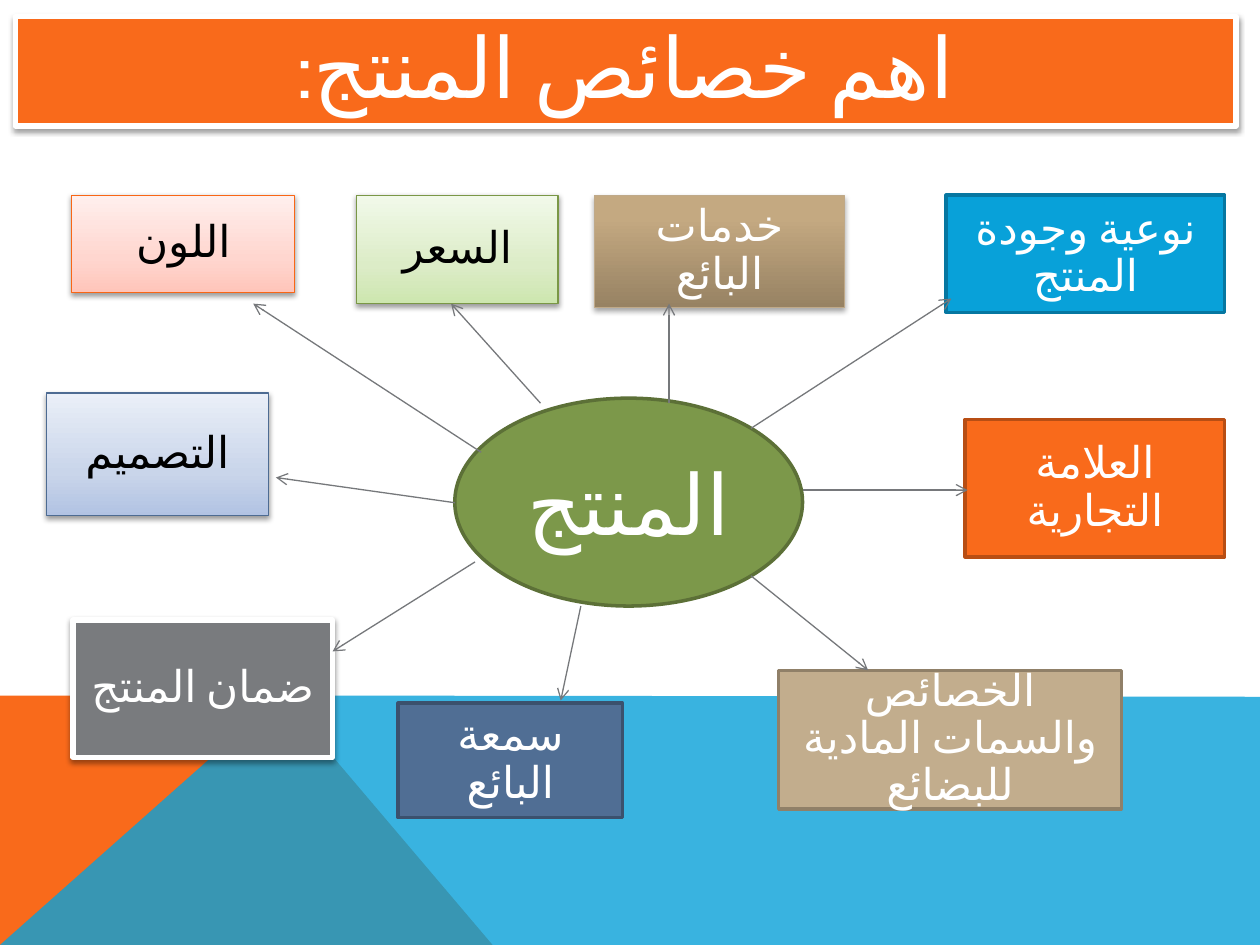
from lxml.etree import SubElement
from pptx import Presentation
from pptx.dml.color import RGBColor
from pptx.enum.lang import MSO_LANGUAGE_ID
from pptx.enum.shapes import MSO_CONNECTOR, MSO_SHAPE
from pptx.enum.text import MSO_ANCHOR, MSO_AUTO_SIZE, PP_ALIGN
from pptx.oxml.ns import qn
from pptx.util import Inches, Pt

WIDE, HIGH = 10, 7.5
FONT = "Cabin"
WHITE, BLACK = RGBColor(255, 255, 255), RGBColor(0, 0, 0)
ORANGE, RUST = RGBColor(0xF9, 0x6A, 0x1B), RGBColor(0xB8, 0x4E, 0x14)
FLAME = RGBColor(0xF9, 0x66, 0x15)
SKY, SEA = RGBColor(0x08, 0xA1, 0xD9), RGBColor(0x06, 0x77, 0xA1)
GREEN, MOSS = RGBColor(0x7C, 0x98, 0x4A), RGBColor(0x5C, 0x70, 0x37)
LEAF = RGBColor(0x7A, 0x97, 0x46)
SAND, EARTH = RGBColor(0xC2, 0xAD, 0x8D), RGBColor(0x90, 0x80, 0x68)
TAN = RGBColor(0xBF, 0xA9, 0x89)
BLUE, NAVY = RGBColor(0x50, 0x6E, 0x94), RGBColor(0x3B, 0x51, 0x6D)
STEEL = RGBColor(0x4D, 0x6B, 0x92)
GRAY, ASH = RGBColor(0x79, 0x7B, 0x7E), RGBColor(0x76, 0x78, 0x7B)

# Gradients run from bottom to top: (percent, colour)
ICE = [(0, "B2C3E3"), (35, "C9D5EA"), (100, "EAEFF8")]
CLAY = [(0, "978263"), (80, "C4A981"), (100, "C6AA80")]
LIME = [(0, "CDE6AF"), (35, "DCECC7"), (100, "F1F9E9")]
ROSE = [(0, "FFC5BA"), (35, "FFD6CF"), (100, "FFEFED")]

# Shadows: opacity percent, distance in points
SOFT, FAINT = (38, 1.6), (35, 1.8)

TITLE = "اهم خصائص المنتج:"
HUB = "المنتج"

# text, (left, top, width, height), fill, line, line width, shadow,
# text colour, arrow from the hub, arrow to the box
TRAITS = [
    ("نوعية وجودة المنتج", (7.51, 1.55, 2.21, 0.93), SKY, SEA, 2, None,
     WHITE, (5.96, 3.4), (7.55, 2.37)),
    ("خدمات البائع", (4.72, 1.55, 1.98, 0.89), CLAY, TAN, 0.75, FAINT,
     WHITE, (5.31, 3.2), (5.31, 2.41)),
    ("السعر", (2.83, 1.55, 1.6, 0.86), LIME, LEAF, 0.75, SOFT,
     BLACK, (4.29, 3.2), (3.58, 2.41)),
    ("اللون", (0.57, 1.55, 1.77, 0.77), ROSE, FLAME, 0.75, SOFT,
     BLACK, (3.82, 3.59), (2.01, 2.41)),
    ("التصميم", (0.37, 3.12, 1.76, 0.97), ICE, STEEL, 0.75, SOFT,
     BLACK, (3.61, 3.99), (2.19, 3.79)),
    ("ضمان المنتج", (0.58, 4.92, 2.06, 1.09), GRAY, WHITE, 3, SOFT,
     WHITE, (3.77, 4.46), (2.64, 5.17)),
    ("سمعة البائع", (3.16, 5.58, 1.78, 0.91), BLUE, NAVY, 2, None,
     WHITE, (4.61, 4.81), (4.45, 5.56)),
    ("الخصائص والسمات المادية للبضائع", (6.18, 5.32, 2.72, 1.1), SAND,
     EARTH, 2, None, WHITE, (5.96, 4.57), (6.89, 5.32)),
    ("العلامة التجارية", (7.66, 3.33, 2.06, 1.09), ORANGE, RUST, 2, None,
     WHITE, (6.37, 3.89), (7.68, 3.89)),
]

# Footer bands: points, colour, opacity percent
BANDS = [
    ([(0, HIGH), (0, 5.52), (2.23, 5.52), (3.91, HIGH)], ORANGE, 100),
    ([(0, HIGH), (2.23, 5.52), (WIDE, 5.53), (WIDE, HIGH)], SKY, 80),
]


def add(node, tag, **attrs):
    return SubElement(node, qn(tag), attrs)


def paint(shape, fill, line, width, shade=None):
    """Set fill (a colour or a list of stops), outline and shadow."""
    props = shape._element.spPr
    if isinstance(fill, list):
        shape.fill.gradient()
        shape.fill.gradient_angle = 90
        stops = props.find(qn("a:gradFill")).find(qn("a:gsLst"))
        stops.clear()
        for at, tint in fill:
            stop = add(stops, "a:gs", pos=str(at * 1000))
            add(stop, "a:srgbClr", val=tint)
    else:
        shape.fill.solid()
        shape.fill.fore_color.rgb = fill
    shape.line.color.rgb = line
    shape.line.width = Pt(width)
    shape.shadow.inherit = False
    if shade:
        alpha, dist = shade
        glow = add(props.find(qn("a:effectLst")), "a:outerShdw",
                   blurRad=str(Pt(3.1)), dist=str(Pt(dist)),
                   dir="5400000", rotWithShape="0")
        tint = add(glow, "a:srgbClr", val="000000")
        add(tint, "a:alpha", val=str(alpha * 1000))


def write(shape, text, size, color, inset=0.05, space=0.9):
    frame = shape.text_frame
    frame.text = text
    frame.word_wrap = True
    frame.auto_size = MSO_AUTO_SIZE.NONE
    frame.vertical_anchor = MSO_ANCHOR.MIDDLE
    frame.margin_left = frame.margin_right = Inches(0.1)
    frame.margin_top = frame.margin_bottom = Inches(inset)
    para = frame.paragraphs[0]
    para.alignment = PP_ALIGN.CENTER
    para.line_spacing = space
    para.font.size = Pt(size)
    para.font.name = FONT
    para.font.color.rgb = color
    para.runs[0].font.language_id = MSO_LANGUAGE_ID.ARABIC
    props = para._p.pPr
    props.set("rtl", "1")
    add(props.find(qn("a:defRPr")), "a:cs", typeface=FONT)


def band(slide, points, color, alpha):
    start, *rest = [(Inches(x), Inches(y)) for x, y in points]
    path = slide.shapes.build_freeform(*start)
    path.add_line_segments(rest, close=True)
    shape = path.convert_to_shape()
    shape.fill.solid()
    shape.fill.fore_color.rgb = color
    shape.line.fill.background()
    shape.shadow.inherit = False
    tint = shape._element.spPr.find(qn("a:solidFill"))[0]
    add(tint, "a:alpha", val=str(alpha * 1000))


def arrow(slide, start, end):
    link = slide.shapes.add_connector(
        MSO_CONNECTOR.STRAIGHT, *map(Inches, start + end))
    link.line.color.rgb = ASH
    link.line.width = Pt(0.75)
    add(link.line._get_or_add_ln(), "a:tailEnd", type="arrow")
    add(link._element.spPr, "a:effectLst")


def main():
    deck = Presentation()
    deck.slide_width, deck.slide_height = Inches(WIDE), Inches(HIGH)
    slide = deck.slides.add_slide(deck.slide_layouts[5])
    shapes = slide.shapes

    for item in BANDS:
        band(slide, *item)

    title = shapes.title
    title.left, title.top = Inches(0.12), Inches(0.13)
    title.width, title.height = Inches(9.69), Inches(0.87)
    paint(title, ORANGE, WHITE, 3, SOFT)
    write(title, TITLE, 48, WHITE)

    for text, box, fill, line, width, shade, color, *_ in TRAITS:
        card = shapes.add_shape(MSO_SHAPE.RECTANGLE, *map(Inches, box))
        paint(card, fill, line, width, shade)
        write(card, text, 25, color, inset=0.1)

    hub = shapes.add_shape(
        MSO_SHAPE.OVAL, *map(Inches, (3.61, 3.16, 2.76, 1.65)))
    paint(hub, GREEN, MOSS, 2)
    write(hub, HUB, 48, WHITE, space=1.0)

    for *_, start, end in TRAITS:
        arrow(slide, start, end)

    deck.save("out.pptx")


if __name__ == "__main__":
    main()
